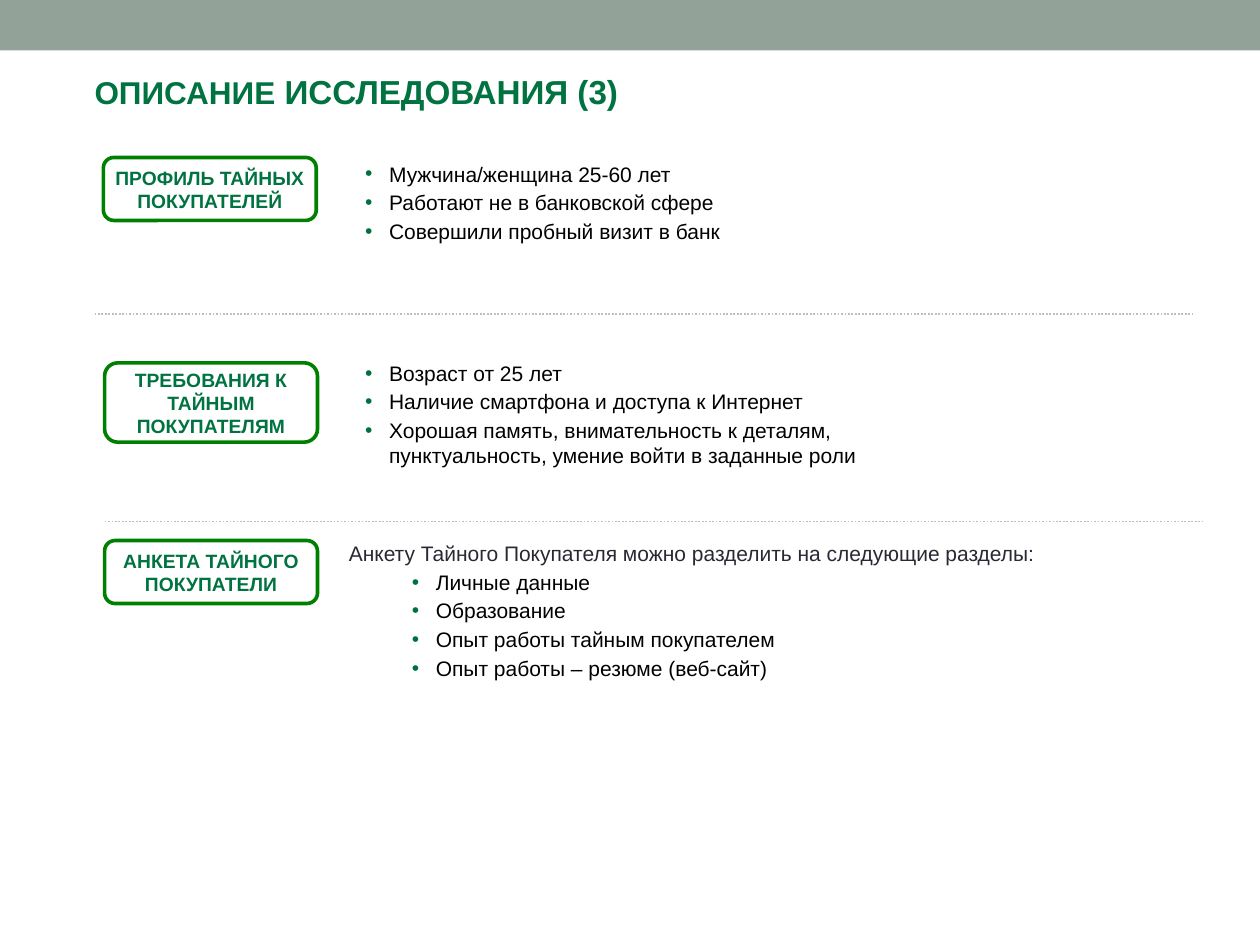
import dataclasses

import lxml.etree
import pptx
import pptx.dml.color
import pptx.enum.dml
import pptx.enum.shapes
import pptx.enum.text
import pptx.oxml.ns
import pptx.util

Inches = pptx.util.Inches
Pt = pptx.util.Pt
Align = pptx.enum.text.PP_ALIGN
Shape = pptx.enum.shapes.MSO_SHAPE


@dataclasses.dataclass(frozen=True)
class Theme:
    font: str = "Arial"
    band: str = "93A299"
    paper: str = "FFFFFF"
    heading: str = "007341"
    border: str = "008000"
    bullet: str = "00703C"
    body: str = "000000"
    intro: str = "292934"
    divider: str = "BFBFBF"
    title_size: float = 18
    title_large: float = 19
    label_size: float = 11
    body_size: float = 12


THEME = Theme()


def rgb(color):
    return pptx.dml.color.RGBColor.from_string(color)


def add_span(para, text, size=THEME.body_size, color=THEME.body, bold=False):
    span = para.add_run()
    span.text = text
    span.font.name = THEME.font
    span.font.size = Pt(size)
    span.font.bold = bold
    span.font.color.rgb = rgb(color)


def set_frame(frame, margin=None, anchor=pptx.enum.text.MSO_ANCHOR.TOP):
    frame.word_wrap = True
    frame.auto_size = pptx.enum.text.MSO_AUTO_SIZE.NONE
    frame.vertical_anchor = anchor
    if margin is not None:
        frame.margin_left = frame.margin_right = Inches(margin)
        frame.margin_top = frame.margin_bottom = Inches(margin)


def set_bullet(para, indent, hanging=0.19):
    properties = para._p.get_or_add_pPr()
    properties.set("marL", str(Inches(indent)))
    properties.set("indent", str(-Inches(hanging)))
    qn = pptx.oxml.ns.qn
    color = lxml.etree.SubElement(properties, qn("a:buClr"))
    lxml.etree.SubElement(color, qn("a:srgbClr"), val=THEME.bullet)
    lxml.etree.SubElement(properties, qn("a:buFont"), typeface=THEME.font)
    lxml.etree.SubElement(properties, qn("a:buChar"), char="•")


def add_title(slide):
    title = slide.shapes.title
    title.left, title.top = Inches(0.75), Inches(0.52)
    title.width, title.height = Inches(6.13), Inches(0.45)
    set_frame(title.text_frame, 0, pptx.enum.text.MSO_ANCHOR.MIDDLE)
    para = title.text_frame.paragraphs[0]
    para.alignment = Align.LEFT
    para.line_spacing = 0.9
    add_span(para, "ОПИСАНИЕ", size=THEME.title_size, color=THEME.heading, bold=True)
    add_span(para, " ИССЛЕДОВАНИЯ (3)", size=THEME.title_large,
             color=THEME.heading, bold=True)


def add_block(slide, kind, left, top, width, height, fill):
    block = slide.shapes.add_shape(
        kind, Inches(left), Inches(top), Inches(width), Inches(height))
    block.shadow.inherit = False
    block.fill.solid()
    block.fill.fore_color.rgb = rgb(fill)
    block.line.fill.background()
    return block


def add_label(slide, text, left, top, height):
    label = add_block(slide, Shape.ROUNDED_RECTANGLE, left, top, 1.69, height,
                      THEME.paper)
    label.adjustments[0] = 0.167
    label.line.color.rgb = rgb(THEME.border)
    label.line.width = Pt(2.08)
    set_frame(label.text_frame, 0.04, pptx.enum.text.MSO_ANCHOR.MIDDLE)
    para = label.text_frame.paragraphs[0]
    para.alignment = Align.CENTER
    add_span(para, text, size=THEME.label_size, color=THEME.heading, bold=True)


def add_divider(slide, left, top, length=8.72):
    divider = slide.shapes.add_connector(
        pptx.enum.shapes.MSO_CONNECTOR.STRAIGHT,
        Inches(left), Inches(top), Inches(left + length), Inches(top))
    divider.line.color.rgb = rgb(THEME.divider)
    divider.line.width = Pt(1)
    divider.line.dash_style = pptx.enum.dml.MSO_LINE.ROUND_DOT
    lxml.etree.SubElement(divider._element.spPr, pptx.oxml.ns.qn("a:effectLst"))


def add_list(slide, items, left, top, width, height, intro=None, level=1, indent=0.19):
    """Add a bulleted list, with a plain justified line above it if intro is given."""
    box = slide.shapes.add_textbox(
        Inches(left), Inches(top), Inches(width), Inches(height))
    frame = box.text_frame
    set_frame(frame)
    lines = ([intro] if intro else []) + items
    for index, text in enumerate(lines):
        para = frame.add_paragraph() if index else frame.paragraphs[0]
        para.space_before = Pt(2)
        if intro and index == 0:
            para.alignment = Align.JUSTIFY
            add_span(para, text, color=THEME.intro)
        else:
            para.level = level
            set_bullet(para, indent)
            add_span(para, text)


def main():
    deck = pptx.Presentation()
    deck.slide_width, deck.slide_height = Inches(10), Inches(7.5)
    slide = deck.slides.add_slide(deck.slide_layouts[5])

    add_block(slide, Shape.RECTANGLE, 0, 0, 10, 0.4, THEME.band)
    add_title(slide)

    add_label(slide, "ПРОФИЛЬ ТАЙНЫХ ПОКУПАТЕЛЕЙ", 0.82, 1.25, 0.5)
    add_list(slide, [
        "Мужчина/женщина 25-60 лет",
        "Работают не в банковской сфере",
        "Совершили пробный визит в банк",
    ], 2.8, 1.23, 5, 0.76)
    add_divider(slide, 0.75, 2.49)

    add_label(slide, "ТРЕБОВАНИЯ К ТАЙНЫМ ПОКУПАТЕЛЯМ", 0.83, 2.88, 0.63)
    add_list(slide, [
        "Возраст от 25 лет",
        "Наличие смартфона и доступа к Интернет",
        "Хорошая память, внимательность к деталям, "
        "пунктуальность, умение войти в заданные роли",
    ], 2.8, 2.81, 5, 0.96)
    add_divider(slide, 0.83, 4.14)

    add_label(slide, "АНКЕТА ТАЙНОГО ПОКУПАТЕЛИ", 0.83, 4.29, 0.5)
    add_list(slide, [
        "Личные данные",
        "Образование",
        "Опыт работы тайным покупателем",
        "Опыт работы – резюме (веб-сайт)",
    ], 2.67, 4.24, 7.02, 1.45, level=2, indent=0.69,
        intro="Анкету Тайного Покупателя можно разделить на следующие разделы:")

    deck.save("out.pptx")


if __name__ == "__main__":
    main()
